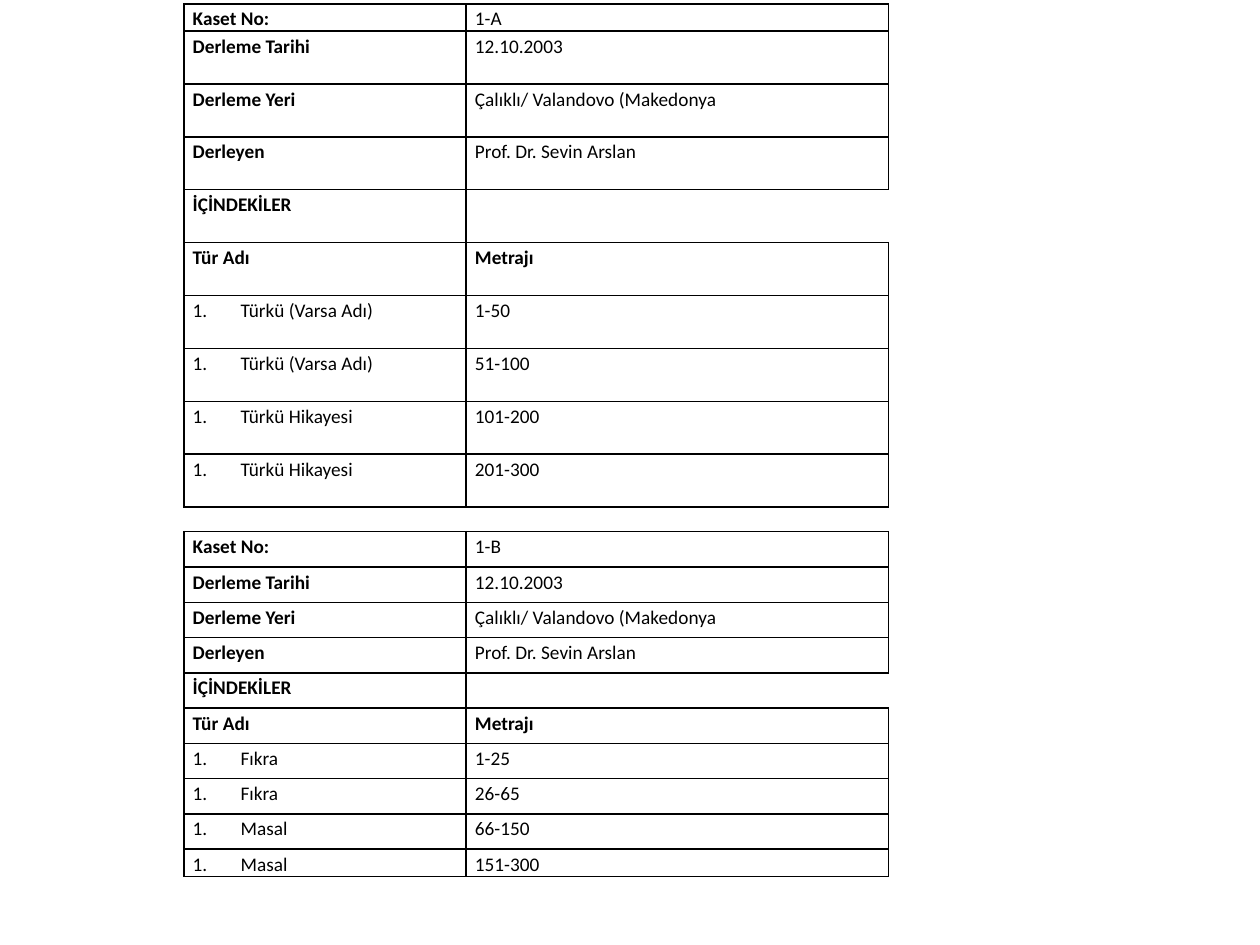
from dataclasses import dataclass

from lxml import etree
from pptx import Presentation
from pptx.dml.color import RGBColor
from pptx.oxml import ns
from pptx.util import Inches, Pt


@dataclass
class Theme:
    font: str = "Calibri"
    size: float = 11
    ink: str = "000000"
    rule: float = 1
    space: float = 1.15


THEME = Theme()
LEFT, COLS = 1.46, (2.24, 3.35)
PAD = dict(margin_left=Inches(0.07), margin_right=Inches(0.07),
           margin_top=0, margin_bottom=0)
BARE = "{2D5ABB26-0587-4C30-8999-92F81FD0307C}"

# Rows shared by both tapes
HEAD = [("Derleme Tarihi", "12.10.2003"),
        ("Derleme Yeri", "Çalıklı/ Valandovo (Makedonya"),
        ("Derleyen ", "Prof. Dr. Sevin Arslan"),
        ("İÇİNDEKİLER", ""),
        ("Tür Adı", "Metrajı")]


def assign(obj, values):
    for name, value in values.items():
        setattr(obj, name, value)


def add(parent, tag, **attrs):
    return etree.SubElement(parent, ns.qn(tag),
                            {k: str(v) for k, v in attrs.items()})


def border(cell, sides):
    """Rule the given sides and leave the others clear."""
    props = cell._tc.get_or_add_tcPr()
    for side in "LRTB":
        line = add(props, "a:ln" + side, w=Pt(THEME.rule))
        if side in sides:
            add(add(line, "a:solidFill"), "a:srgbClr", val=THEME.ink)
        else:
            add(line, "a:noFill")


def number(para):
    """Give a paragraph a hanging number."""
    props = para._p.get_or_add_pPr()
    props.set("marL", str(Inches(0.38)))
    props.set("indent", str(-Inches(0.38)))
    add(props, "a:buFont", typeface="+mj-lt")
    add(props, "a:buAutoNum", type="arabicPeriod")


def write(cell, words, bold=False, listed=False):
    assign(cell, PAD)
    border(cell, "LRTB" if words else "LTB")
    cell.fill.background()
    para = cell.text_frame.paragraphs[0]
    para.line_spacing = THEME.space
    if listed:
        number(para)
    if not words:
        add(para._p, "a:endParaRPr", sz=int(THEME.size * 100))
        return
    run = para.add_run()
    run.text = words
    assign(run.font, dict(name=THEME.font, size=Pt(THEME.size), bold=bold))
    run.font.color.rgb = RGBColor.from_string(THEME.ink)


def tape(slide, top, name, items, highs):
    rows = [("Kaset No: ", name)] + HEAD + items
    frame = slide.shapes.add_table(len(rows), 2, Inches(LEFT), Inches(top),
                                   Inches(sum(COLS)), Inches(sum(highs)))
    grid = frame.table
    assign(grid, dict(first_row=False, horz_banding=False))
    grid._tbl.tblPr.find(ns.qn("a:tableStyleId")).text = BARE
    for col, wide in zip(grid.columns, COLS):
        col.width = Inches(wide)
    first = len(rows) - len(items)
    for i, (label, value) in enumerate(rows):
        grid.rows[i].height = Inches(highs[i])
        write(grid.cell(i, 0), label, i < first, i >= first)
        write(grid.cell(i, 1), value, i == first - 1)


def main():
    deck = Presentation()
    assign(deck, dict(slide_width=Inches(10), slide_height=Inches(7.5)))
    slide = deck.slides.add_slide(deck.slide_layouts[6])

    # Side A: short first row
    tape(slide, 0.03, "1-A",
         [("Türkü (Varsa Adı)", "1-50"), ("Türkü (Varsa Adı)", "51-100"),
          ("Türkü Hikayesi ", "101-200"), ("Türkü Hikayesi", "201-300")],
         [0.21] + [0.42] * 9)

    # Side B: short last row
    tape(slide, 4.22, "1-B",
         [("Fıkra ", "1-25"), ("Fıkra", "26-65"),
          ("Masal", "66-150"), ("Masal", "151-300")],
         [0.28] * 9 + [0.21])

    deck.save("out.pptx")


main()
